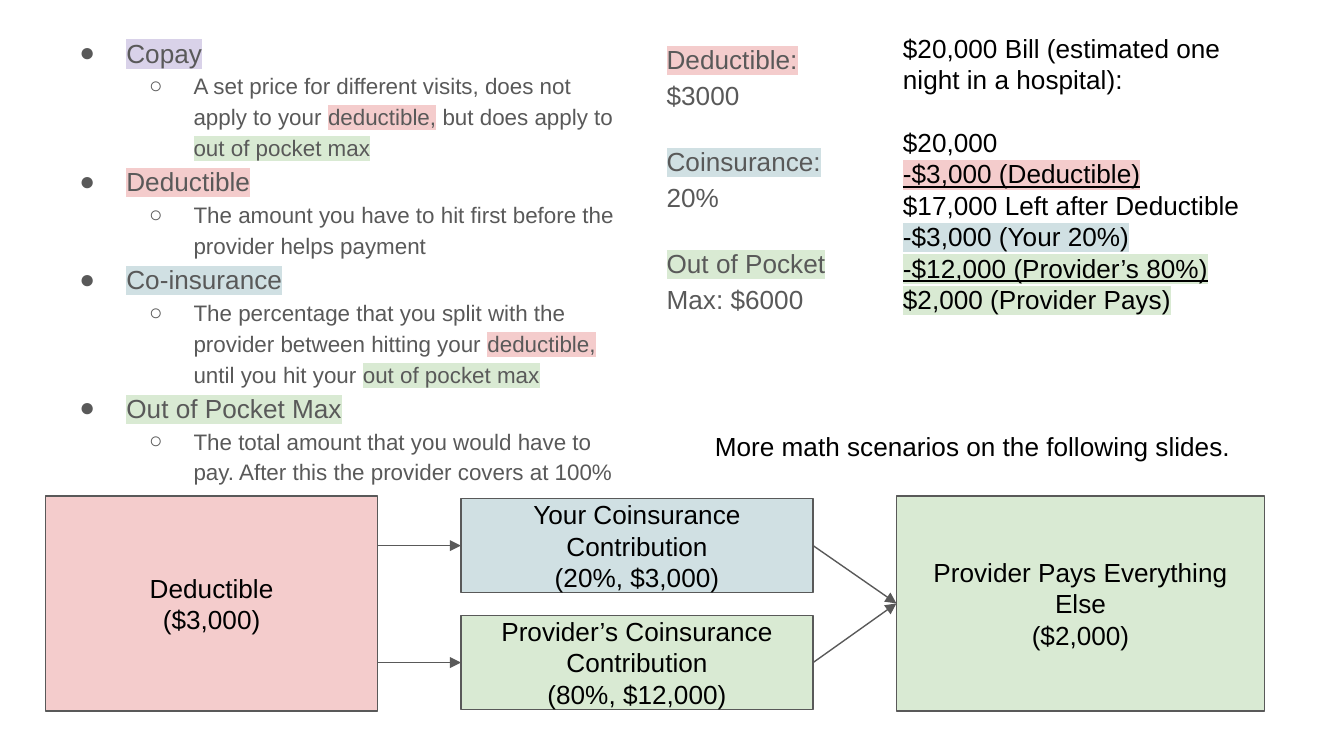
from lxml import etree
from pptx import Presentation
from pptx import util as u
from pptx.dml.color import RGBColor
from pptx.enum import shapes, text
from pptx.oxml.ns import qn

BLACK = RGBColor(0x00, 0x00, 0x00)
GREY = RGBColor(0x59, 0x59, 0x59)
WHITE = RGBColor(0xFF, 0xFF, 0xFF)
PURPLE = RGBColor(0xD9, 0xD2, 0xE9)
RED = RGBColor(0xF4, 0xCC, 0xCC)
BLUE = RGBColor(0xD0, 0xE0, 0xE3)
GREEN = RGBColor(0xD9, 0xEA, 0xD3)

# Flow grid: left edge and width of each column, top and height of each row
COLUMNS = [(0.34, 2.47), (3.43, 2.62), (6.67, 2.74)]
FULL_ROW = (3.69, 1.6)
HALF_ROWS = [(3.71, 0.7), (4.58, 0.7)]

# Each paragraph is a list of (text, highlight) runs
TERMS = [
    ([("Copay", PURPLE)],
     [("A set price for different visits, does not apply to your ", None),
      ("deductible,", RED), (" but does apply to ", None),
      ("out of pocket max", GREEN)]),
    ([("Deductible", RED)],
     [("The amount you have to hit first before the provider helps payment", None)]),
    ([("Co-insurance", BLUE)],
     [("The percentage that you split with the provider between hitting your ", None),
      ("deductible, ", RED), ("until you hit your ", None),
      ("out of pocket max", GREEN)]),
    ([("Out of Pocket Max", GREEN)],
     [("The total amount that you would have to pay. "
       "After this the provider covers at 100%", None)]),
]
PLAN = [
    [("Deductible: ", RED), ("$3000", None)],
    [("Coinsurance:", BLUE), (" 20%", None)],
    [("Out of Pocket ", GREEN), ("Max: $6000", None)],
]
# Text, highlight, underlined
BILL = [
    ("$20,000 Bill (estimated one night in a hospital):", None, False),
    ("$20,000", None, False),
    ("-$3,000 (Deductible)", RED, True),
    ("$17,000 Left after Deductible", None, False),
    ("-$3,000 (Your 20%)", BLUE, False),
    ("-$12,000 (Provider’s 80%)", GREEN, True),
    ("$2,000 (Provider Pays)", GREEN, False),
]


def place(sp, left, top, width, height):
    sp.left, sp.top = u.Inches(left), u.Inches(top)
    sp.width, sp.height = u.Inches(width), u.Inches(height)


def set_frame(tf, anchor=text.MSO_ANCHOR.TOP):
    tf.word_wrap = True
    tf.auto_size = text.MSO_AUTO_SIZE.NONE
    tf.vertical_anchor = anchor
    tf.margin_left = tf.margin_right = u.Inches(0.1)
    tf.margin_top = tf.margin_bottom = u.Inches(0.1)


def add_paragraph(tf, runs, size=14, color=BLACK, underline=False):
    """Fill the empty first paragraph, or append one after it."""
    p = tf.paragraphs[0] if not tf.text else tf.add_paragraph()
    for words, highlight in runs:
        r = p.add_run()
        r.text = words
        r.font.size = u.Pt(size)
        r.font.color.rgb = color
        if underline:
            r.font.underline = True
        if highlight is not None:
            mark = etree.SubElement(r.font._element, qn("a:highlight"))
            etree.SubElement(mark, qn("a:srgbClr"), val=str(highlight))
        r.font.name = "Arial"
    return p


def set_list_style(p, bullet=None, margin=0, indent=0, before=0):
    p.line_spacing = 1.15
    p.space_before = u.Pt(before)
    p.space_after = u.Pt(0)
    pPr = p._p.get_or_add_pPr()
    pPr.set("marL", str(u.Inches(margin)))
    pPr.set("indent", str(u.Inches(indent)))
    if bullet:
        color = etree.SubElement(pPr, qn("a:buClr"))
        etree.SubElement(color, qn("a:srgbClr"), val=str(GREY))
        etree.SubElement(pPr, qn("a:buChar"), char=bullet)
    else:
        etree.SubElement(pPr, qn("a:buNone"))


def fill_terms(sp):
    place(sp, 0.34, 0.14, 4.37, 4.65)
    sp.fill.solid()
    sp.fill.fore_color.rgb = WHITE
    sp.line.color.rgb = WHITE
    sp.line.width = u.Pt(0.75)
    tf = sp.text_frame
    set_frame(tf)
    for term, meaning in TERMS:
        set_list_style(add_paragraph(tf, term, 14, GREY), "●", 0.5, -0.35)
        p = add_paragraph(tf, meaning, 12, GREY)
        p.level = 1
        set_list_style(p, "○", 1, -0.33)


def fill_plan(sp):
    place(sp, 4.86, 0.19, 1.43, 2.24)
    tf = sp.text_frame
    set_frame(tf)
    for i, runs in enumerate(PLAN):
        p = add_paragraph(tf, runs, 14, GREY)
        set_list_style(p, before=16 if i else 0)


def add_text(s, left, top, width, height, lines):
    sp = s.shapes.add_textbox(0, 0, 0, 0)
    place(sp, left, top, width, height)
    set_frame(sp.text_frame)
    for words, highlight, underline in lines:
        add_paragraph(sp.text_frame, [(words, highlight)], underline=underline)
    return sp


def add_box(s, column, row, fill, lines):
    (left, width), (top, height) = column, row
    sp = s.shapes.add_shape(shapes.MSO_SHAPE.RECTANGLE, 0, 0, 0, 0)
    place(sp, left, top, width, height)
    sp.shadow.inherit = False
    sp.fill.solid()
    sp.fill.fore_color.rgb = fill
    sp.line.color.rgb = GREY
    sp.line.width = u.Pt(0.75)
    set_frame(sp.text_frame, text.MSO_ANCHOR.MIDDLE)
    for words in lines:
        p = add_paragraph(sp.text_frame, [(words, None)])
        p.alignment = text.PP_ALIGN.CENTER
    return sp


def add_arrow(s, start, end):
    """Arrow from the right side of start to the middle left of end."""
    middle = start.top + start.height // 2
    if start.height > end.height:  # a tall box is left level with its target
        middle = end.top + end.height // 2
    c = s.shapes.add_connector(
        shapes.MSO_CONNECTOR.STRAIGHT, start.left + start.width, middle,
        end.left, end.top + end.height // 2)
    c.line.color.rgb = GREY
    c.line.width = u.Pt(0.75)
    etree.SubElement(c.line._get_or_add_ln(), qn("a:tailEnd"), type="triangle")
    etree.SubElement(c._element.spPr, qn("a:effectLst"))


def main():
    prs = Presentation()
    prs.slide_width = u.Inches(10)
    prs.slide_height = prs.slide_width * 9 // 16
    s = prs.slides.add_slide(prs.slide_layouts.get_by_name("Two Content"))
    title = s.shapes.title
    title._element.getparent().remove(title._element)

    # Definitions and plan figures
    fill_terms(s.placeholders[1])
    fill_plan(s.placeholders[2])

    # Payment flow
    first, second, third = COLUMNS
    deductible = add_box(s, first, FULL_ROW, RED, ["Deductible", "($3,000)"])
    yours = add_box(s, second, HALF_ROWS[0], BLUE,
                    ["Your Coinsurance Contribution", "(20%, $3,000)"])
    providers = add_box(s, second, HALF_ROWS[1], GREEN,
                        ["Provider’s Coinsurance Contribution", "(80%, $12,000)"])
    rest = add_box(s, third, FULL_ROW, GREEN,
                   ["Provider Pays Everything Else", "($2,000)"])
    for share in (yours, providers):
        add_arrow(s, deductible, share)
        add_arrow(s, share, rest)

    # Worked bill, with a gap of one line below its heading
    bill = add_text(s, 6.62, 0.14, 2.85, 2.35, BILL)
    bill.text_frame.paragraphs[0].space_after = u.Pt(16.8)
    add_text(s, 5.22, 3.1, 4.19, 0.45,
             [("More math scenarios on the following slides.", None, False)])

    prs.save("out.pptx")


if __name__ == "__main__":
    main()
